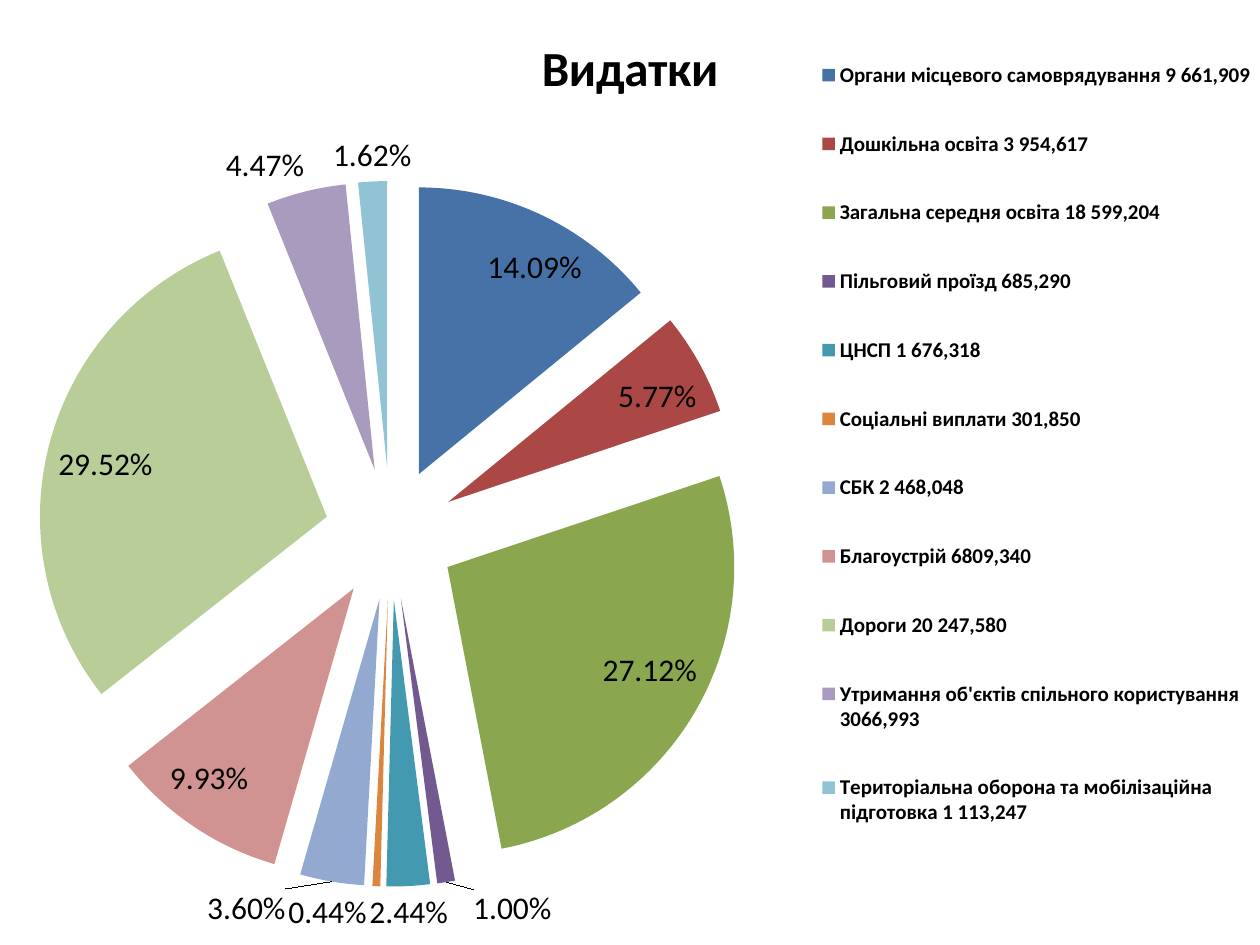
from lxml import etree
from pptx import Presentation
from pptx.chart.data import CategoryChartData
from pptx.dml.color import RGBColor
from pptx.enum.chart import XL_CHART_TYPE, XL_LABEL_POSITION, XL_LEGEND_POSITION
from pptx.oxml import parse_xml
from pptx.oxml.ns import nsdecls, qn
from pptx.util import Inches, Pt

TITLE = "Видатки"
FONT = "Calibri"
BLACK = RGBColor(0, 0, 0)
EXPLOSION = 23

# Category, share in percent, slice colour
EXPENSES = [
    ("Органи місцевого самоврядування 9 661,909", 14.09, RGBColor(0x46, 0x72, 0xA8)),
    ("Дошкільна освіта 3 954,617", 5.77, RGBColor(0xAB, 0x47, 0x44)),
    ("Загальна середня освіта 18 599,204", 27.12, RGBColor(0x8A, 0xA6, 0x4F)),
    ("Пільговий проїзд 685,290", 1, RGBColor(0x72, 0x59, 0x90)),
    ("ЦНСП 1 676,318", 2.44, RGBColor(0x42, 0x99, 0xB0)),
    ("Соціальні виплати 301,850", 0.44, RGBColor(0xDC, 0x85, 0x3E)),
    ("СБК 2 468,048", 3.6, RGBColor(0x93, 0xA9, 0xCF)),
    ("Благоустрій 6809,340", 9.93, RGBColor(0xD1, 0x93, 0x92)),
    ("Дороги 20 247,580", 29.52, RGBColor(0xB9, 0xCD, 0x99)),
    ("Утримання об'єктів спільного користування 3066,993", 4.47, RGBColor(0xA9, 0x9B, 0xBD)),
    ("Територіальна оборона та мобілізаційна підготовка 1 113,247", 1.62,
     RGBColor(0x91, 0xC3, 0xD5)),
]

# Left, top, width, height as shares of the chart
PLOT_AREA = (0.03, 0.19, 0.56, 0.75)
LEGEND_AREA = (0.65, 0.02, 0.35, 0.9)


def style_font(font, size, bold=False):
    font.name = FONT
    font.size = Pt(size)
    font.bold = bold
    font.color.rgb = BLACK


def manual_layout(area, inner=False):
    target = '<c:layoutTarget val="inner"/>' if inner else ""
    modes = "".join(f'<c:{side}Mode val="edge"/>' for side in "xy")
    lengths = "".join(f'<c:{side} val="{share}"/>' for side, share in zip("xywh", area))
    return parse_xml(f'<c:layout {nsdecls("c")}><c:manualLayout>{target}{modes}{lengths}'
                     "</c:manualLayout></c:layout>")


def set_layout(element, layout, index):
    for old in element.findall(qn("c:layout")):
        element.remove(old)
    element.insert(index, layout)


presentation = Presentation()
presentation.slide_width, presentation.slide_height = Inches(10), Inches(7.5)
slide = presentation.slides.add_slide(presentation.slide_layouts[6])

chart_data = CategoryChartData()
chart_data.categories = [name for name, _, _ in EXPENSES]
chart_data.add_series(TITLE, [share for _, share, _ in EXPENSES])
chart = slide.shapes.add_chart(
    XL_CHART_TYPE.PIE, 0, 0, presentation.slide_width, presentation.slide_height, chart_data
).chart
style_font(chart.font, 18)

chart.has_title = True
title_run = chart.chart_title.text_frame.paragraphs[0].add_run()
title_run.text = TITLE
style_font(title_run.font, 28, bold=True)

chart.has_legend = True
legend = chart.legend
legend.position = XL_LEGEND_POSITION.RIGHT
legend.include_in_layout = False
style_font(legend.font, 12, bold=True)

plot = chart.plots[0]
plot.vary_by_categories = True
series = plot.series[0]
for index, (_, _, color) in enumerate(EXPENSES):
    fill = series.points[index].format.fill
    fill.solid()
    fill.fore_color.rgb = color
explosion = etree.Element(qn("c:explosion"), val=str(EXPLOSION))
series._element.find(qn("c:dPt")).addprevious(explosion)

labels = series.data_labels
labels.show_percentage = True
labels.show_value = False
labels.number_format = "0.00%"
labels.number_format_is_linked = False
labels.position = XL_LABEL_POSITION.BEST_FIT
style_font(labels.font, 18)

plot_area = chart._chartSpace.chart.plotArea
set_layout(plot_area, manual_layout(PLOT_AREA, inner=True), 0)
set_layout(legend._element, manual_layout(LEGEND_AREA), 1)

presentation.save("out.pptx")
